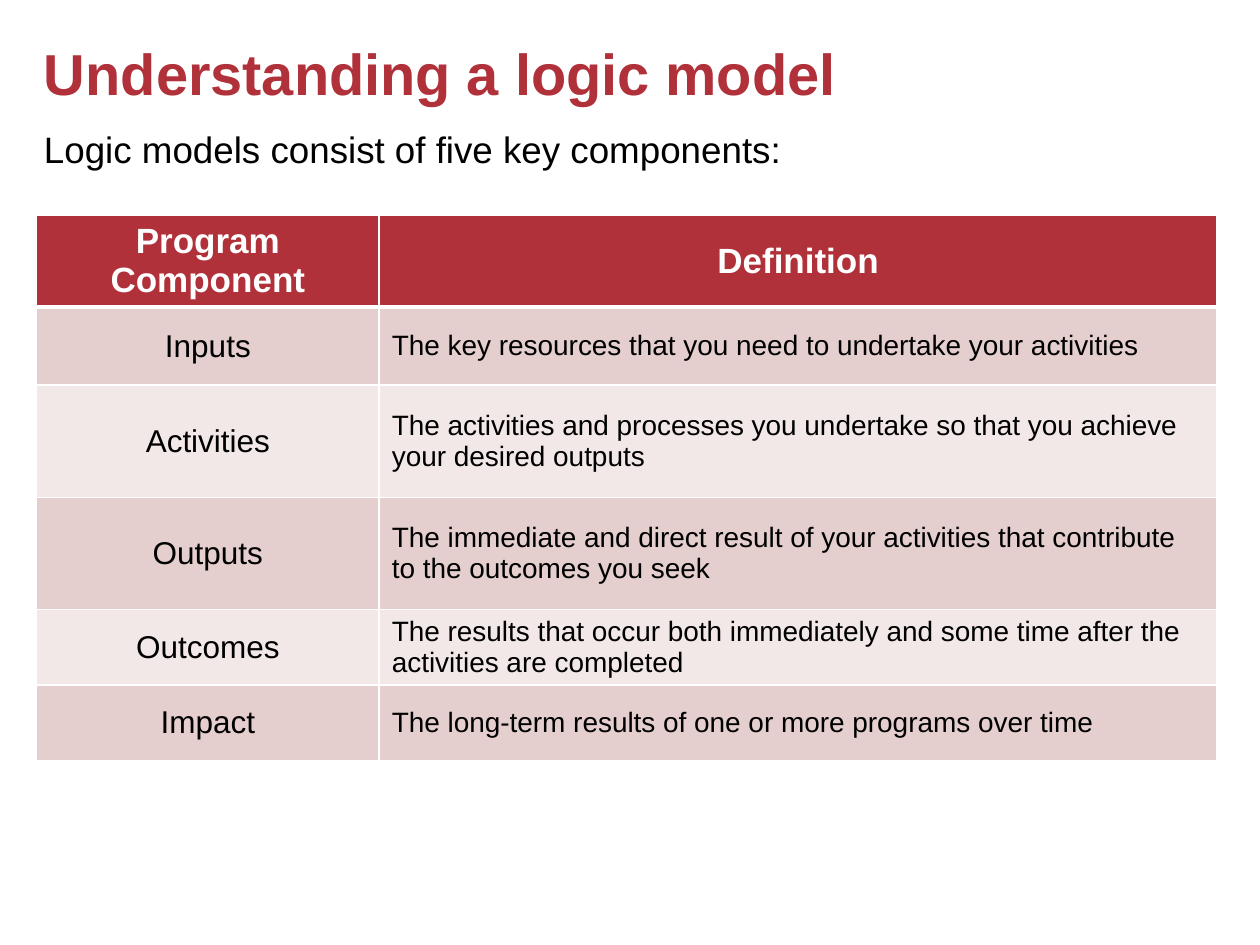
from dataclasses import dataclass

import pptx
import pptx.dml.color
import pptx.enum.text
import pptx.oxml
import pptx.oxml.ns
import pptx.util
from pptx.util import Inches

ALIGN = pptx.enum.text.PP_ALIGN
ANCHOR = pptx.enum.text.MSO_ANCHOR


@dataclass(frozen=True)
class Theme:
    font: str = "Arial"
    accent: str = "B03139"
    text: str = "000000"
    white: str = "FFFFFF"
    bands: tuple = ("E4CECE", "F2E8E8")
    title_size: int = 33
    intro_size: int = 21
    header_size: int = 20
    component_size: int = 18
    definition_size: int = 16


class SlideBuilder:
    def __init__(self, slide, theme):
        self.slide = slide
        self.theme = theme

    def style(self, paragraph, size, color, bold=False):
        font = paragraph.font
        font.name = self.theme.font
        font.size = pptx.util.Pt(size)
        font.bold = bold
        font.color.rgb = pptx.dml.color.RGBColor.from_string(color)

    def text(self, words, left, top, width, height, size, color, bold=False):
        box = self.slide.shapes.add_textbox(
            Inches(left), Inches(top), Inches(width), Inches(height))
        frame = box.text_frame
        frame.word_wrap = True
        frame.text = words
        paragraph = frame.paragraphs[0]
        paragraph.line_spacing = 0.9
        self.style(paragraph, size, color, bold)

    def borders(self, cell, bottom_width):
        """Draw white borders, placed before the fill as the schema requires."""
        properties = cell._tc.get_or_add_tcPr()
        widths = {"lnL": 1, "lnR": 1, "lnT": 1, "lnB": bottom_width}
        for position, (side, width) in enumerate(widths.items()):
            properties.insert(position, pptx.oxml.parse_xml(
                f'<a:{side} {pptx.oxml.ns.nsdecls("a")} w="{pptx.util.Pt(width)}">'
                f'<a:solidFill><a:srgbClr val="{self.theme.white}"/></a:solidFill>'
                f'</a:{side}>'))

    def cell(self, cell, words, fill, size, color, bold, align, bottom_width):
        cell.text = words
        cell.vertical_anchor = ANCHOR.MIDDLE
        cell.margin_top = cell.margin_bottom = Inches(0.03)
        cell.fill.solid()
        cell.fill.fore_color.rgb = pptx.dml.color.RGBColor.from_string(fill)
        paragraph = cell.text_frame.paragraphs[0]
        paragraph.alignment = align
        self.style(paragraph, size, color, bold)
        self.borders(cell, bottom_width)

    def table(self, rows, left, top, column_widths, row_heights):
        theme = self.theme
        table = self.slide.shapes.add_table(
            len(rows), len(column_widths), Inches(left), Inches(top),
            Inches(sum(column_widths)), Inches(sum(row_heights))).table
        for column, width in zip(table.columns, column_widths):
            column.width = Inches(width)
        for row, height in zip(table.rows, row_heights):
            row.height = Inches(height)
        body_sizes = (theme.component_size, theme.definition_size)
        for r, row in enumerate(rows):
            for c, words in enumerate(row):
                header = r == 0
                self.cell(
                    table.cell(r, c), words,
                    fill=theme.accent if header else theme.bands[(r - 1) % 2],
                    size=theme.header_size if header else body_sizes[c],
                    color=theme.white if header else theme.text,
                    bold=header,
                    align=ALIGN.CENTER if header or c == 0 else ALIGN.LEFT,
                    bottom_width=3 if header else 1)


COMPONENTS = [
    ("Program Component", "Definition"),
    ("Inputs", "The key resources that you need to undertake your activities"),
    ("Activities", "The activities and processes you undertake so that you "
                   "achieve your desired outputs"),
    ("Outputs", "The immediate and direct result of your activities that "
                "contribute to the outcomes you seek"),
    ("Outcomes", "The results that occur both immediately and some time after "
                 "the activities are completed"),
    ("Impact", "The long-term results of one or more programs over time"),
]


def main():
    presentation = pptx.Presentation()
    presentation.slide_width = Inches(10)
    presentation.slide_height = Inches(7.5)
    theme = Theme()
    slide = presentation.slides.add_slide(presentation.slide_layouts[6])
    builder = SlideBuilder(slide, theme)
    builder.text("Understanding a logic model", 0.25, 0.31, 8.62, 0.97,
                 theme.title_size, theme.accent, bold=True)
    builder.text("Logic models consist of five key components:",
                 0.25, 1, 8.62, 0.5, theme.intro_size, theme.text)
    builder.table(COMPONENTS, 0.29, 1.71, column_widths=(2.72, 6.65),
                  row_heights=(0.7, 0.62, 0.89, 0.89, 0.6, 0.6))
    presentation.save("out.pptx")


if __name__ == "__main__":
    main()
